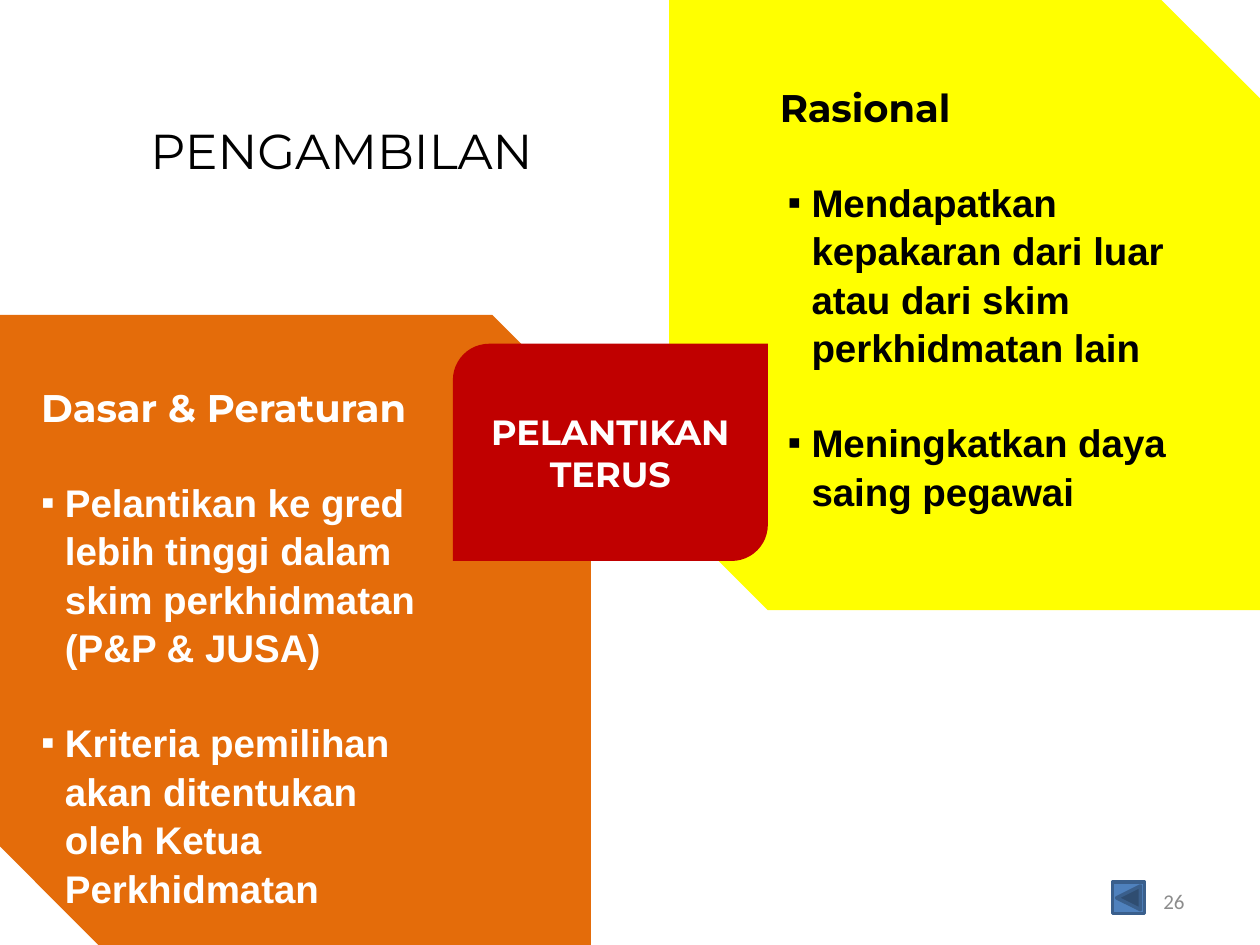
from dataclasses import dataclass

from lxml.etree import SubElement
from pptx import Presentation
from pptx.dml.color import RGBColor
from pptx.enum.shapes import MSO_SHAPE as Preset
from pptx.enum.text import MSO_ANCHOR as Anchor, PP_ALIGN as Align
from pptx.oxml.ns import qn
from pptx.util import Cm, Pt


@dataclass(frozen=True)
class Theme:
    white: str = "FFFFFF"
    black: str = "000000"
    orange: str = "E46C0A"
    yellow: str = "FFFF00"
    red: str = "C00000"
    blue: str = "4F81BD"
    blue_edge: str = "3A5F8C"
    grey: str = "8C8C8C"
    display: str = "Montserrat"
    body: str = "Arial"
    number: str = "Calibri"
    title_size: int = 28
    panel_size: int = 22
    badge_size: int = 20
    number_size: int = 12
    line_spacing: float = 1.05
    item_gap: float = 26.5


@dataclass(frozen=True)
class Area:
    """Left, top, width and height in centimetres."""
    left: float
    top: float
    width: float
    height: float

    def lengths(self) -> list:
        return [Cm(v) for v in (self.left, self.top, self.width, self.height)]


@dataclass(frozen=True)
class Panel:
    shape_area: Area
    text_area: Area
    fill: str
    ink: str
    heading: str
    items: tuple
    indent: float


THEME = Theme()
HANGING = Cm(0.48)

PANELS = (
    Panel(Area(0, 6.35, 11.91, 12.7), Area(0.58, 7.62, 8.59, 11),
          THEME.orange, THEME.white, "Dasar & Peraturan",
          ("Pelantikan ke gred lebih tinggi dalam skim perkhidmatan (P&P & JUSA)",
           "Kriteria pemilihan akan ditentukan oleh Ketua Perkhidmatan"), 0.48),
    Panel(Area(13.49, 0, 11.91, 12.3), Area(15.47, 1.57, 8.84, 11.3),
          THEME.yellow, THEME.black, "Rasional",
          ("Mendapatkan kepakaran dari luar atau dari skim perkhidmatan lain",
           "Meningkatkan daya saing pegawai"), 0.64),
)


def add_shape(page, preset: Preset, area: Area, fill: str):
    shape = page.shapes.add_shape(preset, *area.lengths())
    shape.shadow.inherit = False
    shape.fill.solid()
    shape.fill.fore_color.rgb = RGBColor.from_string(fill)
    shape.line.fill.background()
    return shape


def write(para, text: str, font: str, size: int, ink: str,
          bold: bool = False, align: Align = Align.LEFT) -> None:
    para.text = text
    para.alignment = align
    for span in para.runs:
        span.font.name = font
        span.font.size = Pt(size)
        span.font.bold = bold
        span.font.color.rgb = RGBColor.from_string(ink)


def add_text_box(page, area: Area, wrap: bool = True):
    frame = page.shapes.add_textbox(*area.lengths()).text_frame
    frame.word_wrap = wrap
    return frame


def add_bullet(para, indent: float) -> None:
    props = para._p.get_or_add_pPr()
    props.set("marL", str(Cm(indent)))
    props.set("indent", str(-HANGING))
    SubElement(props, qn("a:buFont"), typeface=THEME.body)
    SubElement(props, qn("a:buChar"), char="▪")


def add_panel_text(page, panel: Panel) -> None:
    frame = add_text_box(page, panel.text_area)
    write(frame.paragraphs[0], panel.heading, THEME.display,
          THEME.panel_size, panel.ink, bold=True)
    for item in panel.items:
        para = frame.add_paragraph()
        write(para, item, THEME.body, THEME.panel_size, panel.ink, bold=True)
        para.line_spacing = THEME.line_spacing
        para.space_before = Pt(THEME.item_gap)
        add_bullet(para, panel.indent)


def main() -> None:
    deck = Presentation()
    deck.slide_width, deck.slide_height = Cm(25.4), Cm(19.05)
    page = deck.slides.add_slide(deck.slide_layouts[6])

    # Panels behind everything else
    for panel in PANELS:
        add_shape(page, Preset.SNIP_2_DIAG_RECTANGLE, panel.shape_area, panel.fill)

    # Page number
    frame = add_text_box(page, Area(18.21, 17.65, 5.92, 1.02))
    frame.vertical_anchor = Anchor.MIDDLE
    write(frame.paragraphs[0], "26", THEME.number, THEME.number_size,
          THEME.grey, align=Align.RIGHT)

    # Panel texts
    for panel in PANELS:
        add_panel_text(page, panel)

    # Central badge
    badge = add_shape(page, Preset.ROUND_2_DIAG_RECTANGLE,
                      Area(9.13, 6.93, 6.35, 4.38), THEME.red)
    badge.text_frame.vertical_anchor = Anchor.MIDDLE
    write(badge.text_frame.paragraphs[0], "PELANTIKAN TERUS", THEME.display,
          THEME.badge_size, THEME.white, bold=True, align=Align.CENTER)

    # Title
    frame = add_text_box(page, Area(2.78, 2.31, 8.76, 1.45), wrap=False)
    write(frame.paragraphs[0], "PENGAMBILAN", THEME.display,
          THEME.title_size, THEME.black)

    # Back button
    button = add_shape(page, Preset.ACTION_BUTTON_BACK_OR_PREVIOUS,
                       Area(22.43, 17.78, 0.64, 0.64), THEME.blue)
    button.line.color.rgb = RGBColor.from_string(THEME.blue_edge)
    button.line.width = Pt(2)

    deck.save("out.pptx")


if __name__ == "__main__":
    main()
